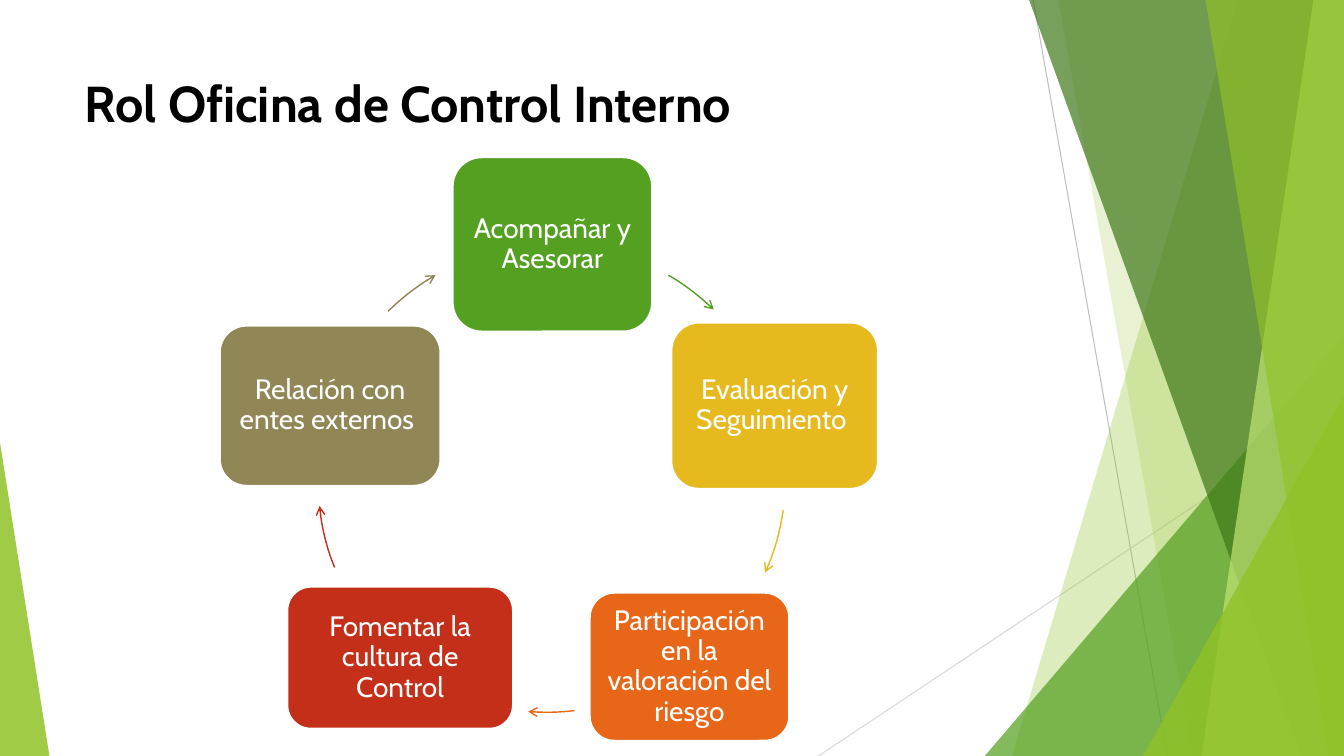
from dataclasses import dataclass

from lxml.etree import SubElement
from pptx import Presentation
from pptx.dml.color import RGBColor
from pptx.enum.shapes import MSO_CONNECTOR, MSO_SHAPE
from pptx.enum.text import MSO_ANCHOR, MSO_AUTO_SIZE, PP_ALIGN
from pptx.oxml.ns import qn
from pptx.util import Inches, Pt

Point = tuple[float, float]

# Grid: square cells of a tenth of an inch, 75 rows high
COLUMNS, ROWS = 133.33, 75
CELL = Inches(0.1)
CURVE_STEPS = 16


@dataclass(frozen=True)
class Theme:
    font: str = "Cabin"
    title_size: int = 36
    box_size: int = 20
    title: str = "000000"
    white: str = "FFFFFF"
    lime: str = "90C226"
    light_lime: str = "C0E474"
    green: str = "54A021"
    dark_green: str = "3F7819"
    yellow: str = "E6B91E"
    orange: str = "E76618"
    red: str = "C42F1A"
    olive: str = "918655"
    gray: str = "BFBFBF"
    light_gray: str = "D9D9D9"


THEME = Theme()


@dataclass(frozen=True)
class Ray:
    start: Point
    end: Point
    color: str


@dataclass(frozen=True)
class Panel:
    """Full-height band from a slanted left edge to the right of the slide."""
    top_column: float
    bottom_column: float
    color: str
    opacity: int


@dataclass(frozen=True)
class Wedge:
    """Triangle standing on the bottom of the slide."""
    column: float
    row: float
    columns: float
    apex: int
    color: str
    opacity: int


@dataclass(frozen=True)
class Role:
    """Box of the cycle, with the curve of the arrow that leaves it."""
    text: str
    color: str
    column: float
    row: float
    columns: float
    rows: float
    curve: tuple[Point, Point, Point, Point]


RAYS = [
    Ray((102.5, 0), (115.8, ROWS), THEME.gray),
    Ray((COLUMNS, 40.3), (81.2, ROWS), THEME.light_gray),
]
FACETS = [
    Panel(122.8, 100.4, THEME.lime, 30),
    Panel(105, 118.3, THEME.lime, 20),
    Wedge(97.7, 33.3, 35.6, 1, THEME.green, 72),
    Panel(102.1, 129.1, THEME.dark_green, 70),
    Panel(130.3, 119.2, THEME.light_lime, 70),
    Panel(119.6, 131.8, THEME.lime, 65),
    Wedge(113.4, 39.3, 19.9, 1, THEME.lime, 80),
    Wedge(0, 43.9, 4.9, 0, THEME.lime, 85),
]
ROLES = [
    Role("Acompañar y Asesorar", THEME.green, 44.9, 15.6, 19.8, 17.3,
         ((66.3, 27.3), (67.9, 28.2), (69.4, 29.4), (70.8, 30.7))),
    Role("Evaluación y Seguimiento ", THEME.yellow, 66.6, 32, 20.5, 16.5,
         ((77.7, 50.6), (77.4, 52.7), (76.8, 54.9), (75.9, 56.8))),
    Role("Participación en la valoración del riesgo", THEME.orange, 58.5, 58.8, 19.8, 14.7,
         ((57, 70.5), (55.4, 70.7), (53.9, 70.7), (52.4, 70.6))),
    Role("Fomentar la cultura de Control", THEME.red, 28.5, 58.2, 22.4, 14.1,
         ((33.2, 56.3), (32.4, 54.4), (31.9, 52.3), (31.7, 50.2))),
    Role("Relación con entes externos ", THEME.olive, 21.8, 32.3, 21.9, 15.9,
         ((38.5, 30.9), (39.9, 29.5), (41.5, 28.3), (43.2, 27.3))),
]


def cells(*counts: float) -> tuple[int, ...]:
    return tuple(round(count * CELL) for count in counts)


def rgb(color: str) -> RGBColor:
    return RGBColor.from_string(color)


def fill_shape(shape, color: str, opacity: int = 100) -> None:
    shape.shadow.inherit = False
    shape.fill.solid()
    shape.fill.fore_color.rgb = rgb(color)
    if opacity < 100:
        for node in shape.element.spPr.iter(qn("a:srgbClr")):
            SubElement(node, qn("a:alpha"), val=str(opacity * 1000))


def set_line(shape, color: str, points: float) -> None:
    shape.line.color.rgb = rgb(color)
    shape.line.width = Pt(points)


def outline(slide, points: list[Point], close: bool):
    corners = [cells(*point) for point in points]
    builder = slide.shapes.build_freeform(*corners[0])
    builder.add_line_segments(corners[1:], close=close)
    shape = builder.convert_to_shape()
    shape.shadow.inherit = False
    return shape


def draw_ray(slide, ray: Ray) -> None:
    line = slide.shapes.add_connector(MSO_CONNECTOR.STRAIGHT, *cells(*ray.start, *ray.end))
    set_line(line, ray.color, 0.75)
    SubElement(line.element.spPr, qn("a:effectLst"))


def draw_facet(slide, facet: Panel | Wedge) -> None:
    if isinstance(facet, Panel):
        shape = outline(slide, [(facet.top_column, 0), (COLUMNS, 0), (COLUMNS, ROWS),
                                (facet.bottom_column, ROWS)], close=True)
    else:
        shape = slide.shapes.add_shape(
            MSO_SHAPE.ISOSCELES_TRIANGLE,
            *cells(facet.column, facet.row, facet.columns, ROWS - facet.row))
        shape.adjustments[0] = facet.apex
    fill_shape(shape, facet.color, facet.opacity)
    shape.line.fill.background()


def draw_title(slide, text: str) -> None:
    title = slide.shapes.title
    title.left, title.top, title.width, title.height = cells(7.4, 6.7, 94, 14.4)
    frame = title.text_frame
    frame.text = text
    frame.auto_size = MSO_AUTO_SIZE.NONE
    frame.vertical_anchor = MSO_ANCHOR.TOP
    style_paragraph(frame.paragraphs[0], THEME.title_size, THEME.title, PP_ALIGN.LEFT)
    frame.paragraphs[0].font.bold = True


def style_paragraph(paragraph, size: int, color: str, alignment: PP_ALIGN) -> None:
    paragraph.alignment = alignment
    paragraph.font.name = THEME.font
    paragraph.font.size = Pt(size)
    paragraph.font.color.rgb = rgb(color)


def draw_box(slide, role: Role) -> None:
    box = slide.shapes.add_shape(MSO_SHAPE.ROUNDED_RECTANGLE,
                                 *cells(role.column, role.row, role.columns, role.rows))
    fill_shape(box, role.color)
    set_line(box, THEME.white, 1.5)
    frame = box.text_frame
    frame.text = role.text
    frame.word_wrap = True
    frame.vertical_anchor = MSO_ANCHOR.MIDDLE
    frame.margin_left = frame.margin_right = frame.margin_top = frame.margin_bottom = Inches(0.08)
    style_paragraph(frame.paragraphs[0], THEME.box_size, THEME.white, PP_ALIGN.CENTER)
    frame.paragraphs[0].line_spacing = 0.9


def curve_point(curve: tuple[Point, ...], t: float) -> Point:
    weights = ((1 - t) ** 3, 3 * t * (1 - t) ** 2, 3 * t ** 2 * (1 - t), t ** 3)
    x, y = (sum(w * point[axis] for w, point in zip(weights, curve)) for axis in (0, 1))
    return x, y


def draw_arrow(slide, role: Role) -> None:
    points = [curve_point(role.curve, step / CURVE_STEPS) for step in range(CURVE_STEPS + 1)]
    arrow = outline(slide, points, close=False)
    arrow.fill.background()
    set_line(arrow, role.color, 1)
    SubElement(arrow.element.spPr.find(qn("a:ln")), qn("a:tailEnd"), type="arrow")


def main() -> None:
    presentation = Presentation()
    presentation.slide_width, presentation.slide_height = cells(COLUMNS, ROWS)
    slide = presentation.slides.add_slide(presentation.slide_layouts[5])
    # Background decoration
    for ray in RAYS:
        draw_ray(slide, ray)
    for facet in FACETS:
        draw_facet(slide, facet)
    # Title and cycle of roles
    draw_title(slide, "Rol Oficina de Control Interno")
    for role in ROLES:
        draw_box(slide, role)
        draw_arrow(slide, role)
    presentation.save("out.pptx")


if __name__ == "__main__":
    main()
